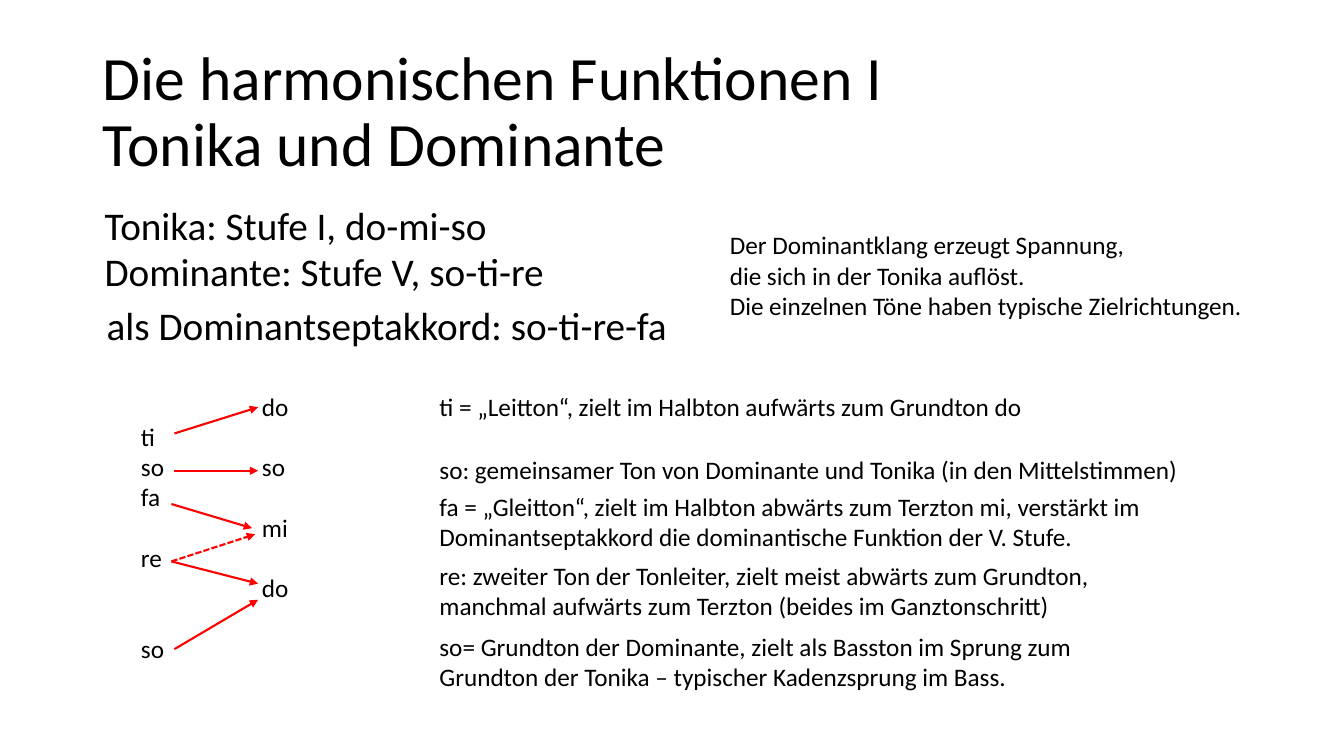
from dataclasses import dataclass

from lxml import etree
from pptx import Presentation
from pptx import util as u
from pptx.dml.color import RGBColor
from pptx.enum import dml, shapes, text
from pptx.oxml.ns import qn
from pptx.shapes.connector import Connector
from pptx.slide import Slide

FONT = "Calibri"
COLORS = {"text": "000000", "arrow": "FF0000"}
LINE = 21.6  # height of one 18 pt line, in points
COL = 4.26  # left edge of the explanations


@dataclass
class Box:
    """Text box; gaps holds the empty lines above each paragraph."""
    left: float
    top: float
    width: float
    height: float
    paras: list[str]
    size: int = 18
    gaps: tuple[int, ...] = ()
    spacing: float = 1.0
    before: float = 0
    middle: bool = False
    wrap: bool = True


@dataclass
class Arrow:
    x1: float
    y1: float
    x2: float
    y2: float
    dashed: bool = False


def head(top: float, left: float, line: str) -> Box:
    return Box(left, top, 5.86, 0.59, [line], size=28, spacing=0.9, before=10)


BOXES = [
    Box(0.92, 0.4, 11.5, 1.45,
        ["Die harmonischen Funktionen I\nTonika und Dominante"],
        size=44, spacing=0.9, middle=True),
    head(2, 0.94, "Tonika: Stufe I, do-mi-so"),
    head(2.46, 0.94, "Dominante: Stufe V, so-ti-re"),
    head(2.99, 0.96, "als Dominantseptakkord: so-ti-re-fa"),
    Box(7.14, 2.23, 5.4, 1.01,
        ["Der Dominantklang erzeugt Spannung,\n"
         "die sich in der Tonika auflöst.\n"
         "Die einzelnen Töne haben typische Zielrichtungen."]),
    Box(1.3, 4.13, 0.43, 2.52, ["ti", "so", "fa", "re", "so"],
        gaps=(0, 0, 0, 1, 2), wrap=False),
    Box(2.5, 3.83, 0.86, 2.22, ["do", "so", "mi", "do"], gaps=(0, 1, 1, 1)),
    Box(COL, 3.83, 6.19, 0.4,
        ["ti = „Leitton“, zielt im Halbton aufwärts zum Grundton do"]),
    Box(COL, 4.46, 7.78, 0.4,
        ["so: gemeinsamer Ton von Dominante und Tonika (in den Mittelstimmen)"]),
    Box(COL, 4.82, 7.3, 0.71,
        ["fa = „Gleitton“, zielt im Halbton abwärts zum Terzton mi, verstärkt im "
         "Dominantseptakkord die dominantische Funktion der V. Stufe."]),
    Box(COL, 5.51, 6.69, 0.71,
        ["re: zweiter Ton der Tonleiter, zielt meist abwärts zum Grundton, "
         "manchmal aufwärts zum Terzton (beides im Ganztonschritt)"]),
    Box(COL, 6.21, 6.8, 0.71,
        ["so= Grundton der Dominante, zielt als Basston im Sprung zum "
         "Grundton der Tonika – typischer Kadenzsprung im Bass."]),
]

ARROWS = [
    Arrow(1.73, 4.3, 2.56, 4.04),
    Arrow(1.73, 4.67, 2.56, 4.67),
    Arrow(1.7, 5, 2.5, 5.24),
    Arrow(1.7, 5.57, 2.56, 5.79),
    Arrow(1.7, 5.57, 2.53, 5.3, dashed=True),
    Arrow(1.73, 6.44, 2.56, 5.95),
]


def add_box(slide: Slide, box: Box) -> None:
    shape = slide.shapes.add_textbox(
        u.Inches(box.left), u.Inches(box.top),
        u.Inches(box.width), u.Inches(box.height))
    frame = shape.text_frame
    frame.word_wrap = box.wrap
    if box.middle:
        frame.vertical_anchor = text.MSO_ANCHOR.MIDDLE
    gaps = box.gaps or (0,) * len(box.paras)
    for i, (words, gap) in enumerate(zip(box.paras, gaps)):
        para = frame.add_paragraph() if i else frame.paragraphs[0]
        para.line_spacing = box.spacing
        para.space_before = u.Pt(box.before + gap * LINE)
        for j, line in enumerate(words.split("\n")):
            if j:
                para.add_line_break()
            run = para.add_run()
            run.text = line
            run.font.name = FONT
            run.font.size = u.Pt(box.size)
            run.font.color.rgb = RGBColor.from_string(COLORS["text"])


def add_tip(line: Connector) -> None:
    """Put an arrowhead at the end and take the shadow away."""
    props = line._element.spPr
    tip = etree.SubElement(line.line._get_or_add_ln(), qn("a:tailEnd"))
    tip.set("type", "triangle")
    etree.SubElement(props, qn("a:effectLst"))


def add_arrow(slide: Slide, arrow: Arrow) -> None:
    line = slide.shapes.add_connector(
        shapes.MSO_CONNECTOR.STRAIGHT,
        u.Inches(arrow.x1), u.Inches(arrow.y1),
        u.Inches(arrow.x2), u.Inches(arrow.y2))
    line.line.color.rgb = RGBColor.from_string(COLORS["arrow"])
    line.line.width = u.Pt(1.5)
    if arrow.dashed:
        line.line.dash_style = dml.MSO_LINE.SQUARE_DOT
    add_tip(line)


def main() -> None:
    deck = Presentation()
    deck.slide_width = u.Inches(13.33)
    deck.slide_height = u.Inches(7.5)
    slide = deck.slides.add_slide(deck.slide_layouts[6])
    for box in BOXES:
        add_box(slide, box)
    for arrow in ARROWS:
        add_arrow(slide, arrow)
    deck.save("out.pptx")


if __name__ == "__main__":
    main()
